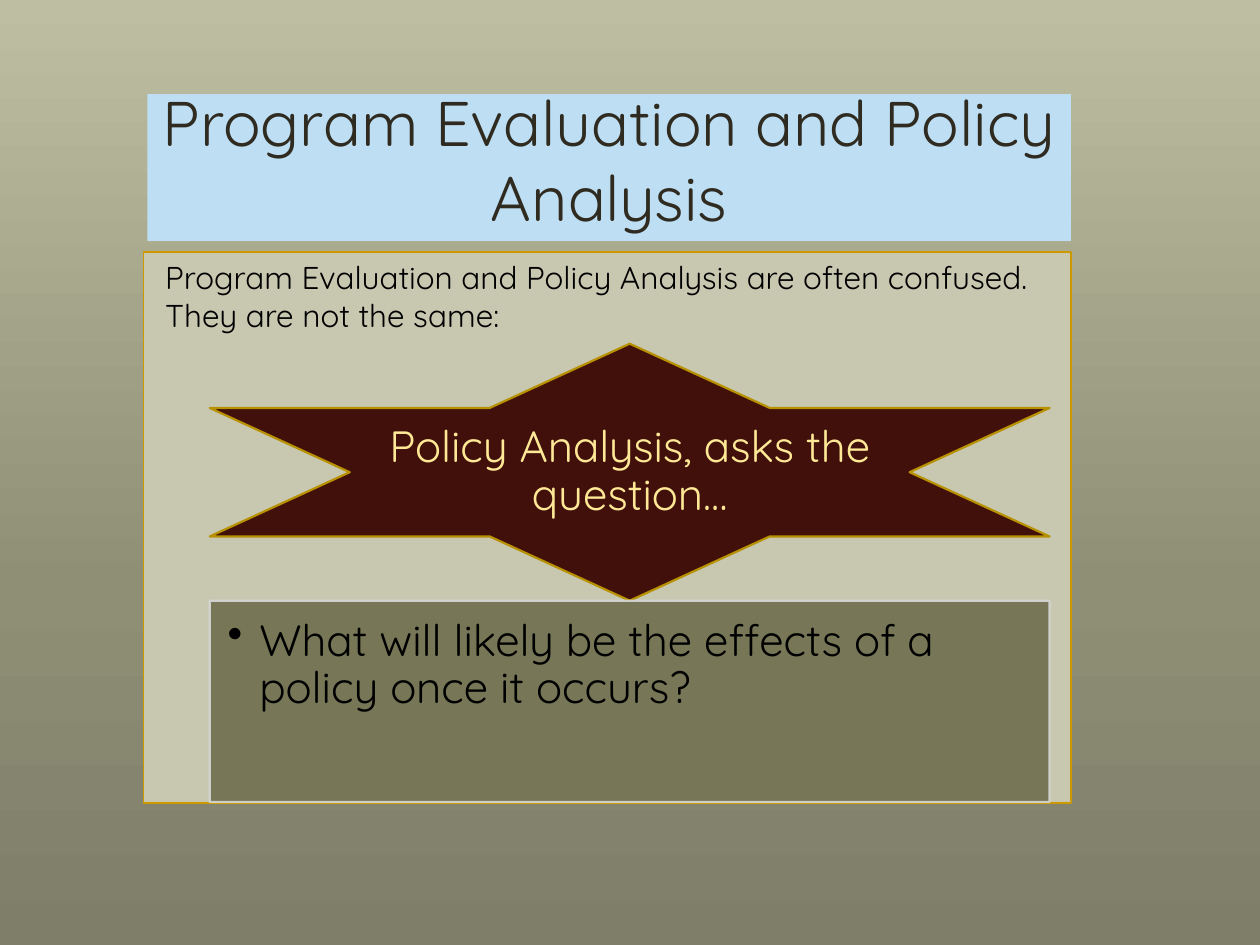
from lxml import etree
from pptx import Presentation
from pptx.dml.color import RGBColor
from pptx.enum.shapes import MSO_SHAPE
from pptx.enum.text import MSO_ANCHOR, PP_ALIGN
from pptx.oxml import parse_xml
from pptx.oxml.ns import nsdecls, qn
from pptx.util import Cm, Pt

RECT, STAR = MSO_SHAPE.RECTANGLE, MSO_SHAPE.STAR_6_POINT
TOP, MIDDLE, BOTTOM = MSO_ANCHOR.TOP, MSO_ANCHOR.MIDDLE, MSO_ANCHOR.BOTTOM
LEFT, CENTER = PP_ALIGN.LEFT, PP_ALIGN.CENTER


class Theme:
    font = "Quicksand"
    background = ((0, "BEBEA2"), (62, "8F8F76"), (100, "7E7E69"))
    title_fill, title_text = "BEDEF3", "2F2B20"
    body_fill, body_line = "C8C8B1", "CC9900"
    star_fill, star_line, star_text = "41100B", "B89101", "FFE996"
    answer_fill, answer_line = "6F6F4E", "D7D7D7"
    text = "000000"
    title_size, body_size, star_size, answer_size = 36, 18, 25, 25


def add_box(kind, box, fill, line=None, width=0, opacity=100):
    sp = s.shapes.add_shape(kind, *(Cm(v) for v in box))
    sp.shadow.inherit = False
    sp.fill.solid()
    sp.fill.fore_color.rgb = RGBColor.from_string(fill)
    if line:
        sp.line.color.rgb = RGBColor.from_string(line)
        sp.line.width = Pt(width)
    else:
        sp.line.fill.background()
    if opacity < 100:
        for color in sp._element.spPr.iter(qn("a:srgbClr")):
            etree.SubElement(color, qn("a:alpha"), val=str(opacity * 1000))
    return sp


def write(sp, text, size, color, align, anchor, margins=(0.25, 0.13, 0.25, 0.13)):
    tf = sp.text_frame
    tf.word_wrap = True
    tf.vertical_anchor = anchor
    tf.margin_left, tf.margin_top, tf.margin_right, tf.margin_bottom = (
        Cm(v) for v in margins)
    p = tf.paragraphs[0]
    p.alignment = align
    r = p.add_run()
    r.text = text
    r.font.name = Theme.font
    r.font.size = Pt(size)
    r.font.color.rgb = RGBColor.from_string(color)
    return p


prs = Presentation()
prs.slide_width, prs.slide_height = Cm(25.4), Cm(19.05)
s = prs.slides.add_slide(prs.slide_layouts[6])

# Background gradient, top to bottom
fill = s.background.fill
fill.gradient()
fill.gradient_angle = 270
stops = s.background._cSld.find(".//" + qn("a:gsLst"))
for stop in list(stops):
    stops.remove(stop)
for pos, color in Theme.background:
    stops.append(parse_xml(
        f'<a:gs {nsdecls("a")} pos="{pos * 1000}"><a:srgbClr val="{color}"/></a:gs>'))

# Title
sp = add_box(RECT, (2.97, 1.9, 18.62, 2.96), Theme.title_fill)
write(sp, "Program Evaluation and Policy Analysis", Theme.title_size,
      Theme.title_text, CENTER, BOTTOM)

# Body panel
sp = add_box(RECT, (2.9, 5.08, 18.69, 11.11), Theme.body_fill, Theme.body_line, 0.75)
p = write(sp, "Program Evaluation and Policy Analysis are often confused.  "
          "They are not the same:", Theme.body_size, Theme.text, LEFT, TOP)
p.space_before = Pt(0.2 * Theme.body_size)
p._p.get_or_add_pPr().set("marL", str(Cm(0.18)))

# Star with the lead-in
left, width = 4.23, 16.93
star_top, star_height = 6.93, 5.18
add_box(STAR, (left, star_top, width, star_height), Theme.star_fill, Theme.star_line, 1.25)
label = (left + width / 6, star_top + star_height / 4, width * 2 / 3, star_height / 2)
sp = s.shapes.add_textbox(*(Cm(v) for v in label))
p = write(sp, "Policy Analysis, asks the question…", Theme.star_size,
          Theme.star_text, CENTER, MIDDLE, (0.48, 0.28, 0.48, 0.28))
p.line_spacing = 0.9

# Question box under the star
sp = add_box(RECT, (left, star_top + star_height, width, 4.06), Theme.answer_fill,
             Theme.answer_line, 1.25, opacity=90)
p = write(sp, "What will likely be the effects of a policy once it occurs?",
          Theme.answer_size, Theme.text, LEFT, TOP, (0.36, 0.36, 0.48, 0.53))
p.line_spacing = 0.9
pPr = p._p.get_or_add_pPr()
pPr.set("marL", str(Cm(0.64)))
pPr.set("indent", str(-Cm(0.64)))
etree.SubElement(pPr, qn("a:buChar"), char="•")

prs.save("out.pptx")
